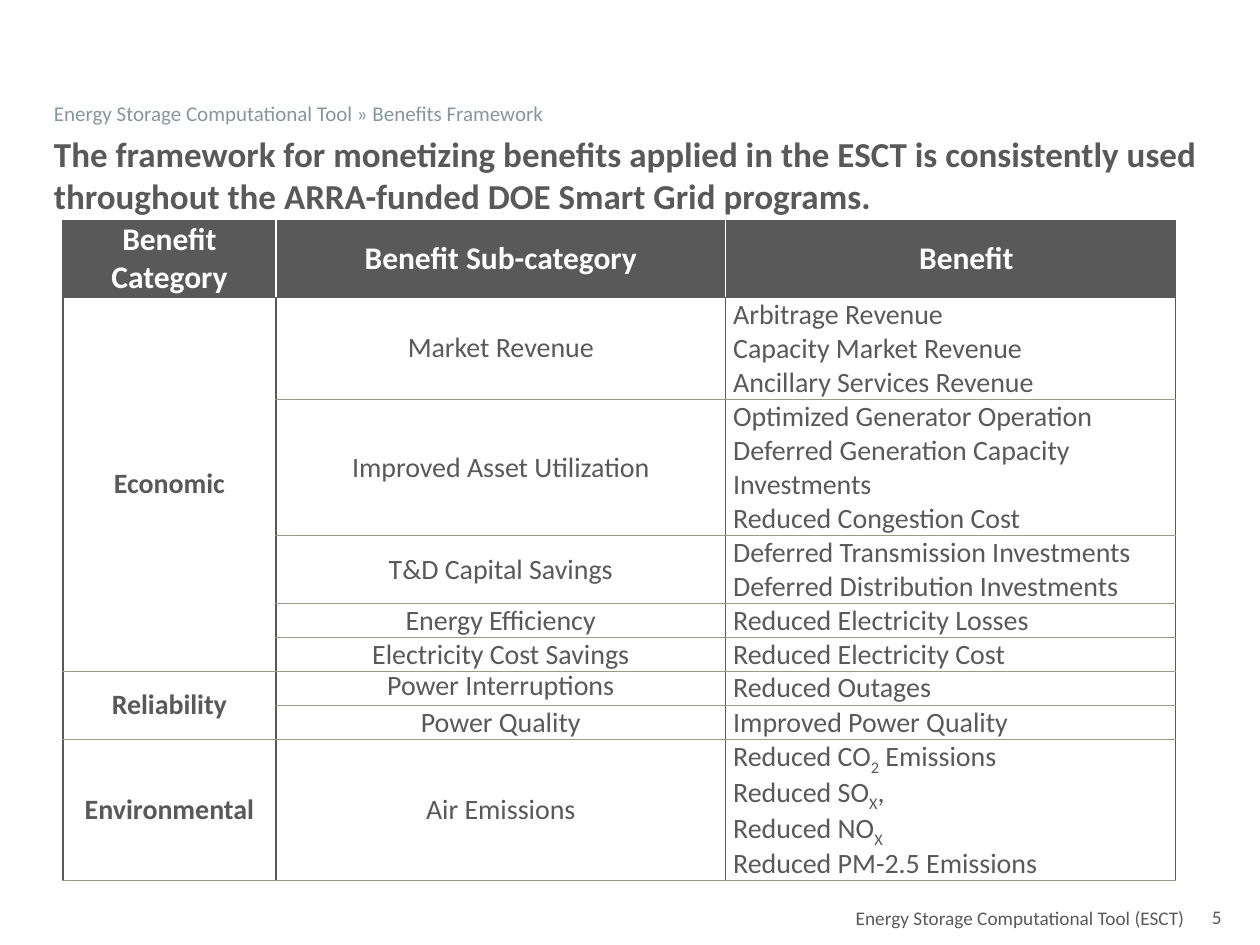
from lxml.etree import SubElement
from pptx import Presentation
from pptx.dml.color import RGBColor
from pptx.enum.text import MSO_ANCHOR as Anchor, PP_ALIGN as Align
from pptx.oxml.ns import qn
from pptx.util import Inches, Pt

GREY = RGBColor(0x59, 0x59, 0x59)
TAN = RGBColor(0xA2, 0x97, 0x84)
SLATE = RGBColor(0x84, 0x97, 0x9E)
WHITE = RGBColor(0xFF, 0xFF, 0xFF)
FONT = "Calibri"

LINE = 0.27
WIDTHS = [1.69, 3.57, 3.57]
HEADS = ["Benefit Category", "Benefit Sub-category", "Benefit"]
# category, sub-category, benefits, height in lines
ROWS = [
    ("Economic", "Market Revenue",
     ["Arbitrage Revenue", "Capacity Market Revenue",
      "Ancillary Services Revenue"], 3),
    ("", "Improved Asset Utilization",
     ["Optimized Generator Operation",
      "Deferred Generation Capacity Investments",
      "Reduced Congestion Cost"], 4),
    ("", "T&D Capital Savings",
     ["Deferred Transmission Investments",
      "Deferred Distribution Investments"], 2),
    ("", "Energy Efficiency", ["Reduced Electricity Losses"], 1),
    ("", "Electricity Cost Savings", ["Reduced Electricity Cost"], 1),
    ("Reliability", "Power Interruptions", ["Reduced Outages"], 1),
    ("", "Power Quality", ["Improved Power Quality"], 1),
    ("Environmental", "Air Emissions",
     ["Reduced CO~2~ Emissions", "Reduced SO~X~,", "Reduced NO~X~",
      "Reduced PM-2.5 Emissions"], 4),
]
SPANS = [(1, 5), (6, 7)]
# line spacing by row and column
SPACING = {(6, 1): Pt(17.2), (6, 2): 0.95, (8, 1): 0.95, (8, 2): 0.95}


def write(frame, lines, size=16, color=GREY, bold=False, align=Align.LEFT,
          space=None):
    """Fill a frame with paragraphs; text between tildes is subscript."""
    for i, line in enumerate(lines):
        para = frame.paragraphs[0] if i == 0 else frame.add_paragraph()
        para.alignment = align
        if space:
            para.line_spacing = space
        for j, part in enumerate(line.split("~")):
            if not part:
                continue
            run = para.add_run()
            run.text = part
            font = run.font
            font.name, font.size, font.bold = FONT, Pt(size), bold
            font.color.rgb = color
            if j % 2:
                run._r.get_or_add_rPr().set("baseline", "-25000")


def edge(cell, **sides):
    """Draw 1 pt borders, given as L, R, T and B colours."""
    props = cell._tc.get_or_add_tcPr()
    for side in "LRTB":
        line = SubElement(props, qn(f"a:ln{side}"), w=str(Pt(1)))
        fill = SubElement(line, qn("a:solidFill"))
        SubElement(fill, qn("a:srgbClr"), val=str(sides[side]))


class Page:
    def __init__(self, deck):
        self.slide = deck.slides.add_slide(deck.slide_layouts[6])

    def text(self, words, x, y, w, h, anchor=Anchor.TOP, **style):
        box = self.slide.shapes.add_textbox(
            Inches(x), Inches(y), Inches(w), Inches(h))
        frame = box.text_frame
        frame.word_wrap = True
        frame.vertical_anchor = anchor
        write(frame, [words], **style)

    def cell(self, cell, lines, fill=None, anchor=Anchor.MIDDLE, **style):
        cell.margin_left = cell.margin_right = Inches(0.06)
        cell.margin_top = cell.margin_bottom = 0
        cell.vertical_anchor = anchor
        if fill is None:
            cell.fill.background()
        else:
            cell.fill.solid()
            cell.fill.fore_color.rgb = fill
        write(cell.text_frame, lines, **style)

    def table(self, x, y):
        highs = [0.61] + [LINE * row[3] for row in ROWS]
        table = self.slide.shapes.add_table(
            len(highs), len(WIDTHS), Inches(x), Inches(y),
            Inches(sum(WIDTHS)), Inches(sum(highs))).table
        table.first_row = table.horz_banding = False
        for col, wide in zip(table.columns, WIDTHS):
            col.width = Inches(wide)
        for row, high in zip(table.rows, highs):
            row.height = Inches(high)

        last = len(HEADS) - 1
        for c, head in enumerate(HEADS):
            cell = table.cell(0, c)
            edge(cell, L=WHITE if c else GREY,
                 R=WHITE if c < last else GREY, T=GREY, B=GREY)
            self.cell(cell, [head], fill=GREY, size=18, color=WHITE,
                      bold=True, align=Align.CENTER)
            if c == last:
                para = cell.text_frame.paragraphs[0]
                para._p.get_or_add_pPr().set("marL", str(Inches(0.25)))

        for r, (group, kind, gains, _) in enumerate(ROWS, 1):
            for c, lines in enumerate(([group], [kind], gains)):
                cell = table.cell(r, c)
                edge(cell, L=GREY, R=GREY, T=GREY if r == 1 else TAN, B=TAN)
                top = c == last and r >= 6
                self.cell(cell, lines, bold=c == 0,
                          anchor=Anchor.TOP if top else Anchor.MIDDLE,
                          align=Align.LEFT if c == last else Align.CENTER,
                          space=SPACING.get((r, c)))
        for first, end in SPANS:
            table.cell(first, 0).merge(table.cell(end, 0))


def main():
    deck = Presentation()
    deck.slide_width, deck.slide_height = Inches(10), Inches(7.5)
    page = Page(deck)
    page.text("Energy Storage Computational Tool (ESCT)",
              3.08, 7.14, 6.42, 0.25, size=11, align=Align.RIGHT)
    page.text("5", 9.52, 7.15, 0.58, 0.26, size=11, anchor=Anchor.MIDDLE)
    page.text("The framework for monetizing benefits applied in the ESCT is "
              "consistently used throughout the ARRA-funded DOE Smart Grid "
              "programs.", 0.33, 1, 9.3, 0.67, size=20, bold=True)
    page.table(0.5, 1.75)
    page.text("Energy Storage Computational Tool » Benefits Framework",
              0.33, 0.75, 9.3, 0.25, size=12, color=SLATE)
    deck.save("out.pptx")


if __name__ == "__main__":
    main()
